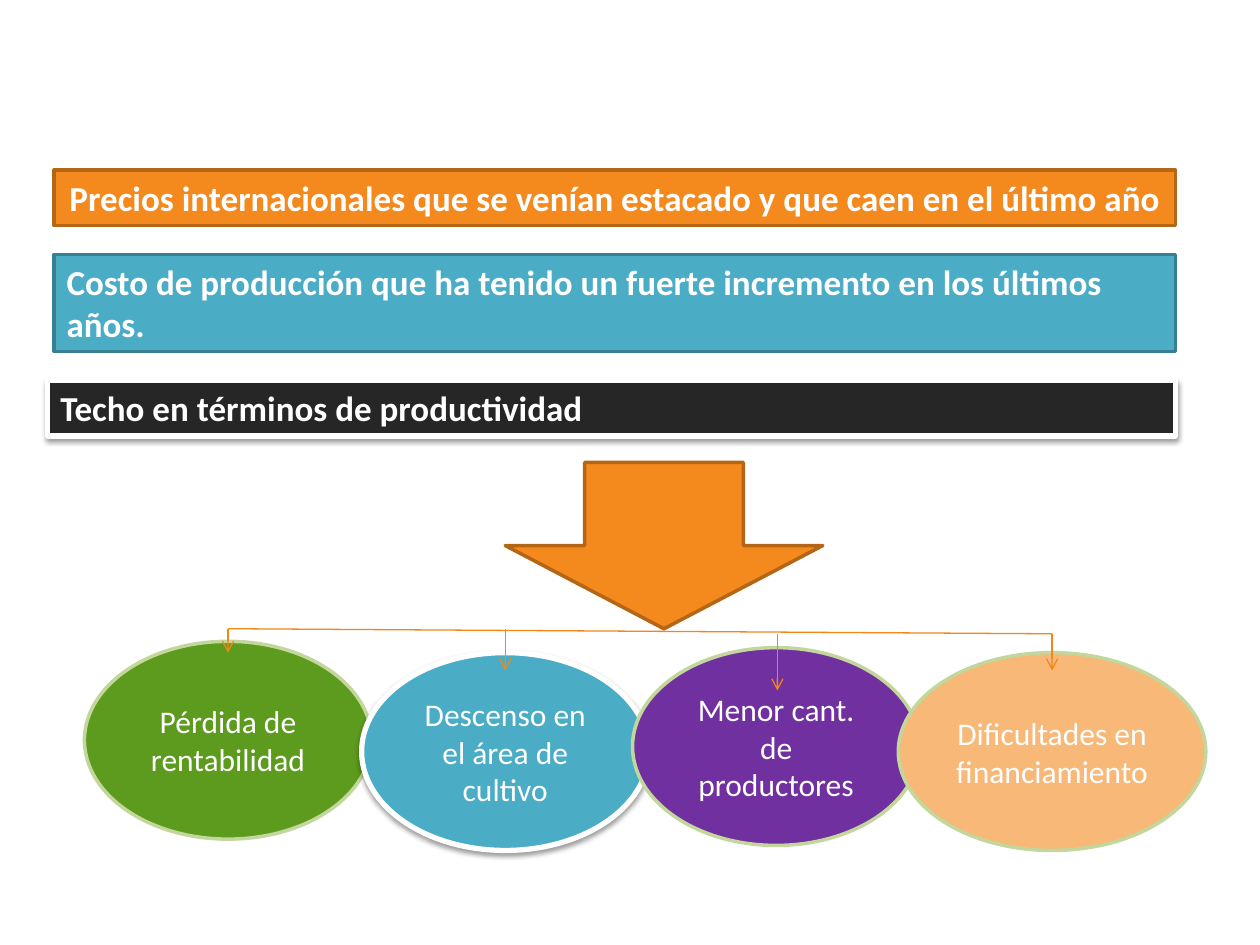
from lxml.etree import SubElement
from pptx import Presentation
from pptx.dml.color import RGBColor
from pptx.enum.shapes import MSO_CONNECTOR, MSO_SHAPE
from pptx.enum.text import MSO_ANCHOR, PP_ALIGN
from pptx.oxml.ns import qn
from pptx.util import Inches, Pt

WHITE = RGBColor(0xFF, 0xFF, 0xFF)
ORANGE = RGBColor(0xF4, 0x89, 0x1E)
DARK_ORANGE = RGBColor(0xB5, 0x65, 0x16)
CONNECTOR_ORANGE = RGBColor(0xF4, 0x86, 0x18)
PEACH = RGBColor(0xF8, 0xB8, 0x78)
TEAL = RGBColor(0x4B, 0xAC, 0xC6)
DARK_TEAL = RGBColor(0x37, 0x7F, 0x92)
CHARCOAL = RGBColor(0x26, 0x26, 0x26)
GREEN = RGBColor(0x5C, 0x9B, 0x1D)
PALE_GREEN = RGBColor(0xC3, 0xD6, 0x9B)
PURPLE = RGBColor(0x70, 0x30, 0xA0)

# text, (left, top, width, height), fill, outline, alignment
CAUSES = [
    ("Precios internacionales que se venían estacado y que caen en el último año",
     (0.43, 1.35, 8.9, 0.44), ORANGE, DARK_ORANGE, PP_ALIGN.CENTER),
    ("Costo de producción que ha tenido un fuerte incremento en los últimos años.",
     (0.43, 2.02, 8.9, 0.77), TEAL, DARK_TEAL, PP_ALIGN.LEFT),
    ("Techo en términos de productividad",
     (0.38, 3.02, 8.95, 0.44), CHARCOAL, WHITE, PP_ALIGN.LEFT),
]
ARROW_BOX = (4.01, 3.67, 2.52, 1.32)

# text, left, top, width, fill, outline
EFFECTS = [
    ("Pérdida de rentabilidad", 0.67, 5.09, 2.28, GREEN, PALE_GREEN),
    ("Descenso en el área de cultivo", 2.87, 5.18, 2.28, TEAL, WHITE),
    ("Menor cant. de productores", 5.02, 5.14, 2.28, PURPLE, PALE_GREEN),
    ("Dificultades en financiamiento", 7.13, 5.18, 2.44, PEACH, PALE_GREEN),
]
EFFECT_HEIGHT = 1.57

BRANCH_START, BRANCH_END = (1.81, 4.99), (8.35, 5.03)
# x, top, bottom
DROPS = [(1.81, 4.99, 5.18), (4.01, 4.99, 5.32), (6.17, 5.03, 5.48), (8.35, 5.03, 5.32)]


def add_soft_shadow(shape):
    effects = shape._element.spPr.find(qn("a:effectLst"))
    shadow = SubElement(effects, qn("a:outerShdw"), blurRad=str(Pt(3.1)),
                        dist=str(Pt(1.6)), dir="5400000", rotWithShape="0")
    color = SubElement(shadow, qn("a:srgbClr"), val="000000")
    SubElement(color, qn("a:alpha"), val="38000")


def add_block(slide, kind, box, fill, outline):
    """Add a filled shape; a white outline is thicker and carries a shadow."""
    shape = slide.shapes.add_shape(kind, *map(Inches, box))
    shape.shadow.inherit = False
    shape.fill.solid()
    shape.fill.fore_color.rgb = fill
    shape.line.color.rgb = outline
    shape.line.width = Pt(3 if outline == WHITE else 2)
    if outline == WHITE:
        add_soft_shadow(shape)
    return shape


def write(shape, text, alignment, anchor, font_format):
    frame = shape.text_frame
    frame.word_wrap = True
    frame.vertical_anchor = anchor
    paragraph = frame.paragraphs[0]
    paragraph.text = text
    paragraph.alignment = alignment
    font = paragraph.runs[0].font
    for name, value in font_format.items():
        setattr(font, name, value)
    font.color.rgb = WHITE


def add_line(slide, start, end, arrow=False):
    line = slide.shapes.add_connector(MSO_CONNECTOR.STRAIGHT, *map(Inches, start + end))
    line.line.color.rgb = CONNECTOR_ORANGE
    line.line.width = Pt(0.75)
    if arrow:
        SubElement(line.line._get_or_add_ln(), qn("a:tailEnd"), type="arrow")
    SubElement(line._element.spPr, qn("a:effectLst"))


def main():
    presentation = Presentation()
    presentation.slide_width, presentation.slide_height = Inches(10), Inches(7.5)
    slide = presentation.slides.add_slide(presentation.slide_layouts[6])

    cause_font = {"name": "Calibri", "size": Pt(20), "bold": True}
    for text, box, fill, outline, alignment in CAUSES:
        bar = add_block(slide, MSO_SHAPE.RECTANGLE, box, fill, outline)
        write(bar, text, alignment, MSO_ANCHOR.TOP, cause_font)

    add_block(slide, MSO_SHAPE.DOWN_ARROW, ARROW_BOX, ORANGE, DARK_ORANGE)

    effect_font = {"name": "Calibri", "size": Pt(18)}
    for text, left, top, width, fill, outline in EFFECTS:
        box = (left, top, width, EFFECT_HEIGHT)
        ellipse = add_block(slide, MSO_SHAPE.OVAL, box, fill, outline)
        write(ellipse, text, PP_ALIGN.CENTER, MSO_ANCHOR.MIDDLE, effect_font)

    add_line(slide, BRANCH_START, BRANCH_END)
    for x, top, bottom in DROPS:
        add_line(slide, (x, top), (x, bottom), arrow=True)

    presentation.save("out.pptx")


if __name__ == "__main__":
    main()
